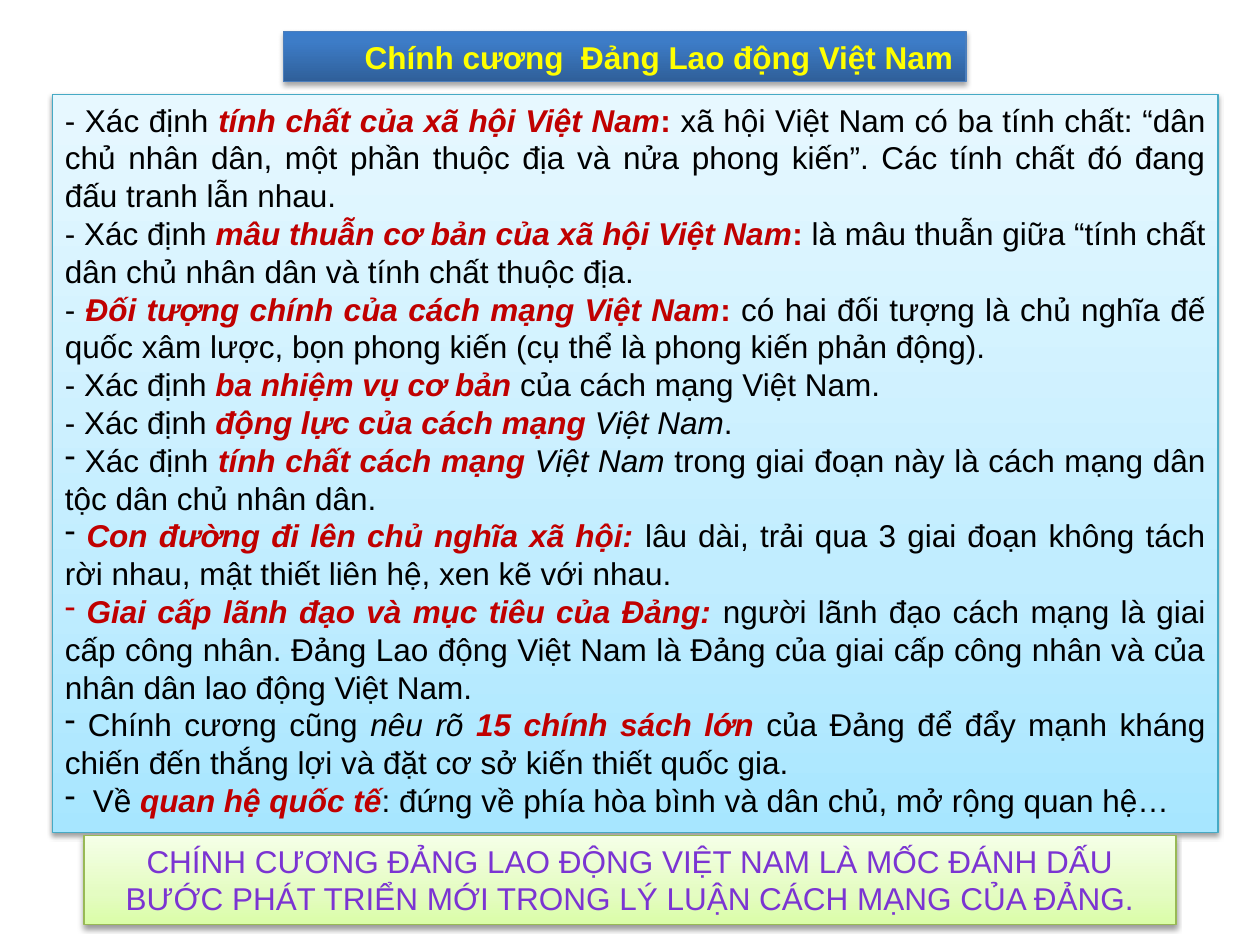
from copy import deepcopy
from lxml import etree
from pptx import Presentation
from pptx.dml.color import RGBColor
from pptx.enum.shapes import MSO_SHAPE
from pptx.enum.text import MSO_ANCHOR, MSO_AUTO_SIZE, PP_ALIGN
from pptx.oxml.ns import qn
from pptx.util import Pt

RECT = MSO_SHAPE.RECTANGLE
TOP = MSO_ANCHOR.TOP
GROW = MSO_AUTO_SIZE.SHAPE_TO_FIT_TEXT
LEFT, MID, RIGHT, FULL = PP_ALIGN.LEFT, PP_ALIGN.CENTER, PP_ALIGN.RIGHT, PP_ALIGN.JUSTIFY
RED, BLACK, YELLOW, PURPLE = "C00000", "000000", "FFFF00", "7B34D2"


def color(code):
    return RGBColor.from_string(code)


def write(para, text, code, bold=False, slant=False):
    run = para.add_run()
    run.text = text
    font = run.font
    font.name, font.size = "Arial", Pt(18)
    font.bold, font.italic = bold, slant
    font.color.rgb = color(code)


deck = Presentation()
deck.slide_width, deck.slide_height = Pt(720), Pt(540)
slide = deck.slides.add_slide(deck.slide_layouts[6])

panels = [
    ((162, 18, 390, 28.8), [(0, "2F5F99"), (0.8, "3D7CC7"), (1, "3A7CCB")], "4B7EBC", 35, 1.8),
    ((30, 54, 666, 421.9), [(0, "A7E6FF"), (0.35, "C1EDFF"), (1, "E7F8FF")], "46AAC5", 38, 1.6),
    ((48, 477.4, 624, 51), [(0, "DAFDA7"), (0.35, "E4FCC2"), (1, "F5FFE7")], "98B955", 38, 1.6),
]
frames = []
for place, stops, edge, alpha, drop in panels:
    box = slide.shapes.add_shape(RECT, *[Pt(n) for n in place])
    box.line.color.rgb = color(edge)
    box.line.width = Pt(0.75)
    box.fill.gradient()
    box.fill.gradient_angle = 90
    props = box._element.spPr
    ramp = props.find(qn("a:gradFill")).find(qn("a:gsLst"))
    ramp.append(deepcopy(ramp[0]))
    for stop, (spot, code) in zip(box.fill.gradient_stops, stops):
        stop.position = spot
        stop.color.rgb = color(code)
    box.shadow.inherit = False
    shade = etree.SubElement(
        props.find(qn("a:effectLst")), qn("a:outerShdw"), blurRad=str(Pt(3.1)),
        dist=str(Pt(drop)), dir="5400000", rotWithShape="0")
    tint = etree.SubElement(shade, qn("a:srgbClr"), val=BLACK)
    etree.SubElement(tint, qn("a:alpha"), val=str(alpha * 1000))
    frame = box.text_frame
    frame.word_wrap = True
    frame.auto_size = GROW
    frame.vertical_anchor = TOP
    frames.append(frame)

title, body, close = frames

para = title.paragraphs[0]
para.alignment = RIGHT
write(para, "Chính cương  Đảng Lao động Việt Nam", YELLOW, True)

points = [
    (False, [("- Xác định ", ""), ("tính chất của xã hội Việt Nam", "bi"), (": ", "b"),
             ("xã hội Việt Nam có ba tính chất: “dân chủ nhân dân, một phần thuộc địa và nửa "
              "phong kiến”. Các tính chất đó đang đấu tranh lẫn nhau.", "")]),
    (False, [("- Xác định ", ""), ("mâu thuẫn cơ bản của xã hội Việt Nam", "bi"), (": ", "b"),
             ("là mâu thuẫn giữa “tính chất dân chủ nhân dân và tính chất thuộc địa.", "")]),
    (False, [("- ", ""), ("Đối tượng chính của cách mạng Việt Nam", "bi"), (": ", "b"),
             ("có hai đối tượng là chủ nghĩa đế quốc xâm lược, bọn phong kiến "
              "(cụ thể là phong kiến phản động).", "")]),
    (False, [("- Xác định ", ""), ("ba nhiệm vụ cơ bản ", "bi"),
             ("của cách mạng Việt Nam.", "")]),
    (False, [("- Xác định ", ""), ("động lực của cách mạng", "bi"),
             (" Việt Nam", "i"), (".", "")]),
    (True, [(" Xác định ", ""), ("tính chất cách mạng ", "bi"), ("Việt Nam", "i"),
            (" trong giai đoạn này là cách mạng dân tộc dân chủ nhân dân.", "")]),
    (True, [(" ", ""), ("Con đường đi lên chủ nghĩa xã hội: ", "bi"),
            ("lâu dài, trải qua 3 giai đoạn không tách rời nhau, mật thiết liên hệ, "
             "xen kẽ với nhau.", "")]),
    (True, [(" Giai cấp lãnh đạo và mục tiêu của Đảng: ", "bi"),
            ("người lãnh đạo cách mạng là giai cấp công nhân. Đảng Lao động Việt Nam là Đảng "
             "của giai cấp công nhân và của nhân dân lao động Việt Nam. ", "")]),
    (True, [(" Chính cương cũng ", ""), ("nêu rõ ", "i"), ("15 chính sách lớn ", "bi"),
            ("của Đảng để đẩy mạnh kháng chiến đến thắng lợi và đặt cơ sở kiến thiết "
             "quốc gia.", "")]),
    (True, [("  Về ", ""), ("quan hệ quốc tế", "bi"),
            (": đứng về phía hòa bình và dân chủ, mở rộng quan hệ… ", "")]),
]
for rank, (dash, parts) in enumerate(points):
    para = body.add_paragraph() if rank else body.paragraphs[0]
    para.alignment = FULL
    if dash:
        rules = para._p.get_or_add_pPr()
        etree.SubElement(rules, qn("a:buFontTx"))
        etree.SubElement(rules, qn("a:buChar"), char="-")
    for text, style in parts:
        bold = "b" in style
        write(para, text, RED if bold else BLACK, bold, "i" in style)

para = close.paragraphs[0]
para.alignment = MID
write(para, "CHÍNH CƯƠNG ĐẢNG LAO ĐỘNG VIỆT NAM LÀ MỐC ĐÁNH DẤU BƯỚC PHÁT TRIỂN MỚI "
            "TRONG LÝ LUẬN CÁCH MẠNG CỦA ĐẢNG.", PURPLE)

deck.save("out.pptx")
